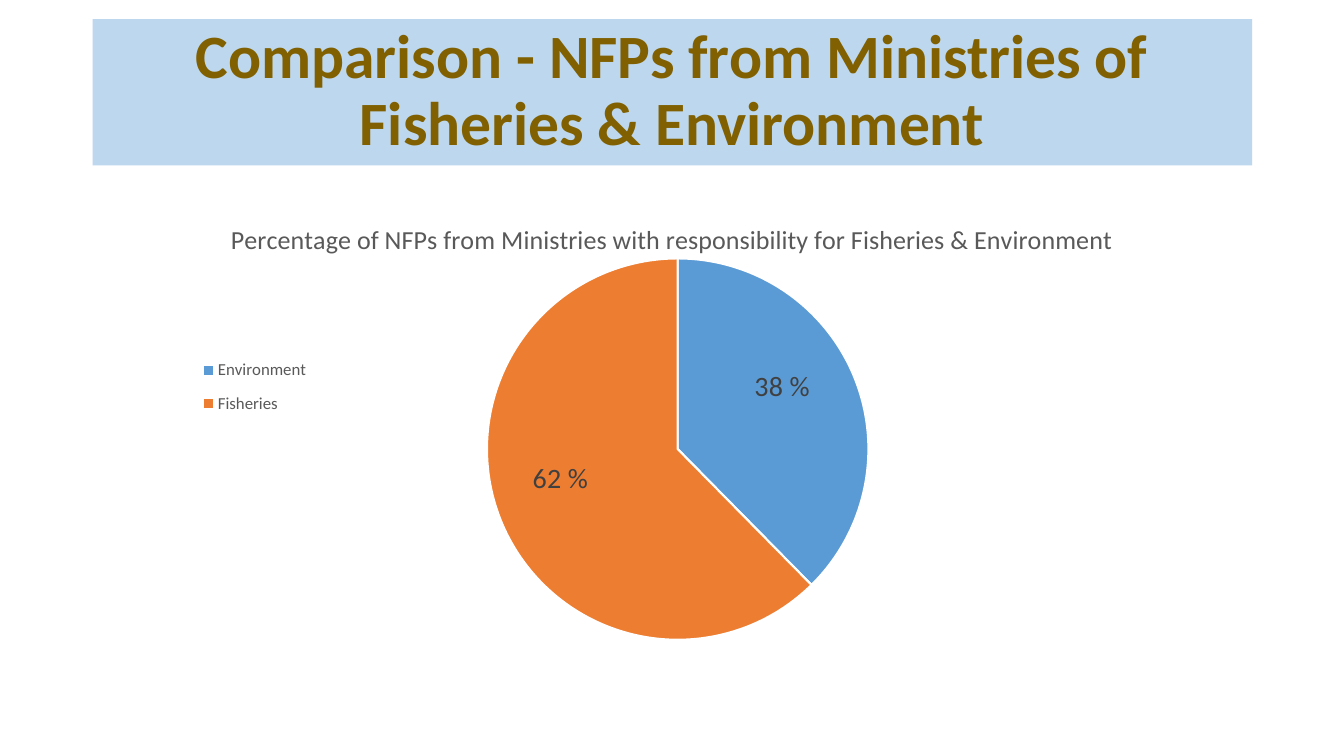
from dataclasses import dataclass

from lxml.etree import SubElement
from pptx import Presentation
from pptx.chart.chart import Chart
from pptx.chart.data import CategoryChartData
from pptx.dml.color import RGBColor
from pptx.enum.chart import XL_CHART_TYPE as ChartType
from pptx.enum.chart import XL_LABEL_POSITION as LabelPosition
from pptx.enum.chart import XL_LEGEND_POSITION as LegendPosition
from pptx.enum.shapes import MSO_SHAPE as Shape
from pptx.enum.text import MSO_ANCHOR as Anchor
from pptx.enum.text import PP_ALIGN as Align
from pptx.oxml.ns import qn
from pptx.slide import Slide
from pptx.text.text import TextFrame
from pptx.util import Inches, Pt


@dataclass(frozen=True)
class Theme:
    font: str = "Calibri"
    banner: str = "BDD7EE"
    heading: str = "806000"
    caption: str = "595959"
    label: str = "404040"
    border: str = "FFFFFF"
    heading_size: float = 44
    caption_size: float = 18.6
    label_size: float = 20
    legend_size: float = 12


@dataclass(frozen=True)
class Slice:
    name: str
    value: int
    label: str
    color: str
    label_shift: tuple[float, float]


THEME = Theme()
LEFT, WIDTH = Inches(0.92), Inches(11.5)
SLICES = (
    Slice("Environment", 38, "38 %", "5B9BD5", (0.014, -0.056)),
    Slice("Fisheries", 63, "62 %", "ED7D31", (-0.025, -0.013)),
)


def rgb(value: str) -> RGBColor:
    return RGBColor.from_string(value)


def write(frame: TextFrame, text: str, *, size: float, color: str,
          bold: bool = False, spacing: float | None = None) -> None:
    para = frame.paragraphs[0]
    para.alignment = Align.CENTER
    if spacing:
        para.line_spacing = spacing
    span = para.add_run()
    span.text = text
    span.font.name = THEME.font
    span.font.size = Pt(size)
    span.font.bold = bold
    span.font.color.rgb = rgb(color)


def place(element, after: str, **settings: float | str) -> None:
    """Give a chart part a manual layout, following its named child."""
    for old in element.findall(qn("c:layout")):
        element.remove(old)
    layout = SubElement(element, qn("c:layout"))
    manual = SubElement(layout, qn("c:manualLayout"))
    for name, value in settings.items():
        SubElement(manual, qn(f"c:{name}")).set("val", str(value))
    if after:
        element.find(qn(after)).addnext(layout)
    else:
        element.insert(0, layout)


def add_banner(slide: Slide) -> None:
    box = slide.shapes.add_shape(Shape.RECTANGLE, LEFT, Inches(0.19), WIDTH, Inches(1.45))
    box.shadow.inherit = False
    box.fill.solid()
    box.fill.fore_color.rgb = rgb(THEME.banner)
    box.line.fill.background()
    box.text_frame.word_wrap = True
    box.text_frame.vertical_anchor = Anchor.MIDDLE
    write(box.text_frame, "Comparison - NFPs from Ministries of Fisheries & Environment",
          size=THEME.heading_size, color=THEME.heading, bold=True, spacing=0.9)


def add_legend(chart: Chart) -> None:
    chart.has_legend = True
    legend = chart.legend
    legend.position = LegendPosition.BOTTOM
    legend.include_in_layout = False
    legend.font.name = THEME.font
    legend.font.size = Pt(THEME.legend_size)
    legend.font.color.rgb = rgb(THEME.caption)
    place(legend._element, "c:legendPos", xMode="edge", yMode="edge",
          x=0.09, y=0.303, w=0.1, h=0.166)


def style_slices(chart: Chart) -> None:
    plot = chart.plots[0]
    plot.vary_by_categories = True
    for index, part in enumerate(SLICES):
        point = plot.series[0].points[index]
        point.format.fill.solid()
        point.format.fill.fore_color.rgb = rgb(part.color)
        point.format.line.color.rgb = rgb(THEME.border)
        point.format.line.width = Pt(1.5)
        label = point.data_label
        write(label.text_frame, part.label, size=THEME.label_size, color=THEME.label)
        label.position = LabelPosition.CENTER
        shift_x, shift_y = part.label_shift
        place(label._dLbl, "c:idx", x=shift_x, y=shift_y)


def add_pie(slide: Slide) -> None:
    data = CategoryChartData()
    data.categories = [part.name for part in SLICES]
    data.add_series("Series 1", [part.value for part in SLICES])
    chart = slide.shapes.add_chart(
        ChartType.PIE, LEFT, Inches(2), WIDTH, Inches(4.76), data).chart
    chart.font.name = THEME.font
    chart.font.size = Pt(10)
    chart.has_title = True
    chart.chart_title.include_in_layout = False
    write(chart.chart_title.text_frame,
          "Percentage of NFPs from Ministries with responsibility for Fisheries & Environment",
          size=THEME.caption_size, color=THEME.caption)
    add_legend(chart)
    style_slices(chart)
    plot_area = chart._chartSpace.chart.plotArea
    place(plot_area, "", layoutTarget="inner", xMode="edge", yMode="edge",
          x=0.34, y=0.118, w=0.329, h=0.796)


def main() -> None:
    deck = Presentation()
    deck.slide_width, deck.slide_height = Inches(13.33), Inches(7.5)
    page = deck.slides.add_slide(deck.slide_layouts[6])
    add_pie(page)
    add_banner(page)
    deck.save("out.pptx")


if __name__ == "__main__":
    main()
